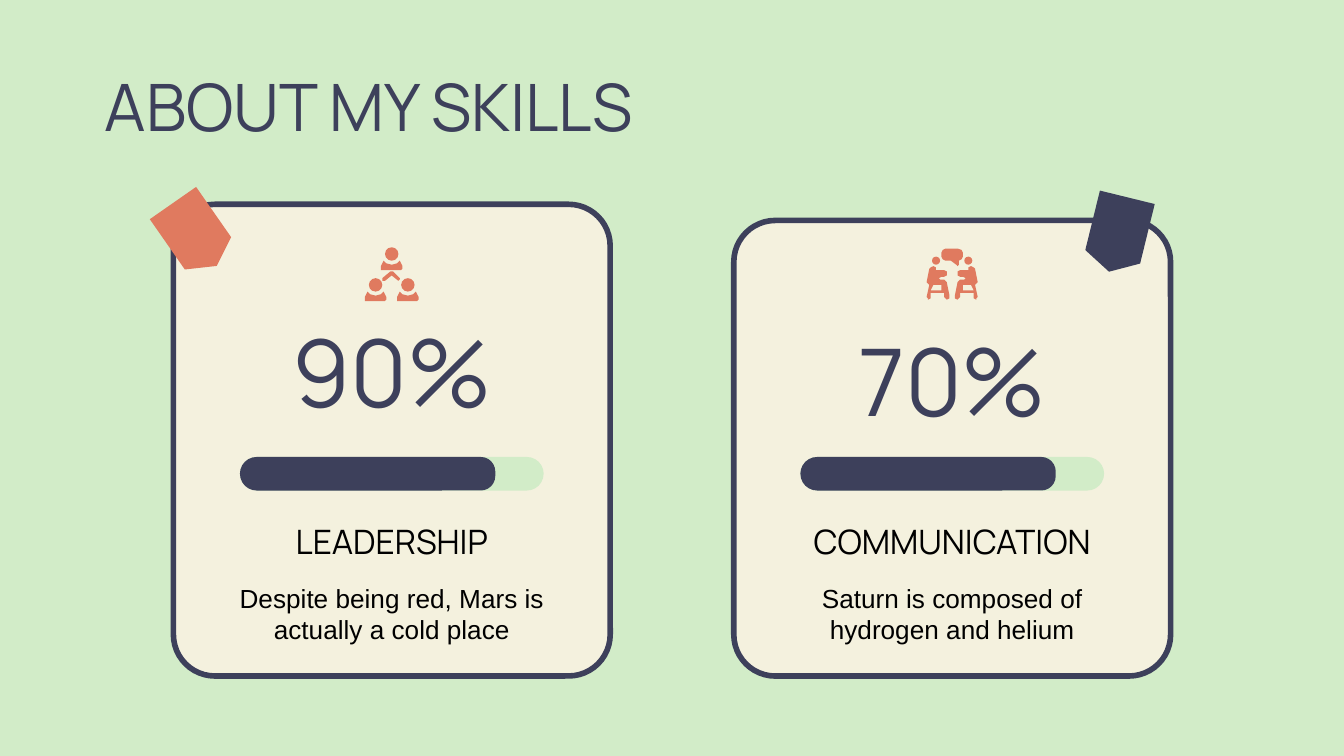
from pptx import Presentation
from pptx.dml.color import RGBColor
from pptx.enum.shapes import MSO_SHAPE as SHAPE
from pptx.enum.text import MSO_ANCHOR as ANCHOR, PP_ALIGN as ALIGN
from pptx.util import Inches, Pt

GREEN = RGBColor(0xD2, 0xEC, 0xC8)
CREAM = RGBColor(0xF4, 0xF1, 0xDE)
NAVY = RGBColor(0x3D, 0x40, 0x5B)
CORAL = RGBColor(0xE0, 0x7A, 0x5F)
BLACK = RGBColor(0, 0, 0)
HEAD_FONT, BODY_FONT = "Manrope", "Arial"

CARD_W, CARD_BOTTOM = 3.25, 5.03
TEXT_W = 2.55
BAR_W, BAR_H, FILLED_W = 2.26, 0.25, 1.9
FACE = 0.1

BODY = [(2, 0), (0.7, 2), (0, 4), (0, 6), (0.3, 6.7), (1, 7), (14.5, 7), (15.2, 6.7),
        (15.5, 6), (15.5, 4), (14.8, 2), (13.5, 0), (11.5, 2), (7.7, 3), (4, 2)]
CHEVRON = [(7, 0), (6, 0.3), (0.3, 5), (0, 6), (0.5, 7), (1.5, 7), (7, 3),
           (11.5, 7), (12.5, 7), (13, 6), (12.7, 5), (8, 0.3)]
BUBBLE = [(3, 0), (1, 1), (0, 3), (0, 6), (1, 8), (3, 9), (7, 9), (11, 12.5),
          (12, 13), (13, 12), (13, 9), (15, 8), (15.5, 6), (15.5, 3), (15, 1), (12.5, 0)]
SITTER = [(-14, 0), (-16, 1), (-17, 2), (-19, 12), (-18.5, 13), (-17, 14),
          (-19, 23), (-18.5, 24.5), (-17.5, 25), (-16.5, 24), (-15.5, 20),
          (-6.5, 20), (-5.5, 23), (-4, 25), (-2.5, 24), (-1.5, 22), (-4.5, 12),
          (-6.5, 10), (-9, 10), (-10.5, 9), (-8.5, 8), (-5.5, 8), (-4, 7),
          (-3.5, 5.5), (-4, 4), (-5.5, 3), (-11.5, 3), (-12.5, 1)]
CHAIR_GAP = [(-8.5, 14), (-7.5, 18), (-15.5, 18), (-14.5, 14)]


def paint(sp, color):
    sp.shadow.inherit = False
    sp.fill.solid()
    sp.fill.fore_color.rgb = color
    sp.line.fill.background()
    return sp


def add_shape(slide, kind, x, y, w, h, color, rotation=0):
    sp = slide.shapes.add_shape(kind, Inches(x), Inches(y), Inches(w), Inches(h))
    sp.rotation = rotation
    return paint(sp, color)


def add_outline(slide, x, y, *contours):
    start = contours[0][0]
    builder = slide.shapes.build_freeform(start[0], start[1], scale=Inches(0.01))
    builder.add_line_segments(contours[0][1:])
    for contour in contours[1:]:
        builder.move_to(*contour[0])
        builder.add_line_segments(contour[1:])
    return paint(builder.convert_to_shape(Inches(x), Inches(y)), CORAL)


def write(sp, text, size, font, color, align=ALIGN.CENTER, anchor=ANCHOR.TOP):
    tf = sp.text_frame
    tf.word_wrap = True
    tf.vertical_anchor = anchor
    tf.margin_left = tf.margin_right = tf.margin_top = tf.margin_bottom = 0
    p = tf.paragraphs[0]
    p.alignment = align
    r = p.add_run()
    r.text = text
    r.font.size = Pt(size)
    r.font.name = font
    r.font.color.rgb = color


def add_text(slide, cx, y, h, *args, **kwargs):
    sp = slide.shapes.add_textbox(Inches(cx - TEXT_W / 2), Inches(y), Inches(TEXT_W), Inches(h))
    write(sp, *args, **kwargs)


def add_title(slide, x, y, w, h):
    sp = slide.shapes.title
    sp.left, sp.top, sp.width, sp.height = map(Inches, (x, y, w, h))
    write(sp, "ABOUT MY SKILLS", 35, HEAD_FONT, NAVY, align=ALIGN.LEFT)


def add_team_icon(slide, cx, y):
    for dx, dy in ((0, 0), (0.12, 0.23), (-0.12, 0.23)):
        add_shape(slide, SHAPE.OVAL, cx + dx - FACE / 2, y + dy, FACE, FACE, CORAL)
        add_outline(slide, cx + dx - 0.08, y + dy + FACE, BODY)
    add_outline(slide, cx - 0.07, y + 0.18, CHEVRON)


def add_talk_icon(slide, cx, y):
    add_outline(slide, cx - 0.08, y + 0.01, BUBBLE)
    for side in (1, -1):
        add_shape(slide, SHAPE.OVAL, cx - side * 0.12 - 0.03, y + 0.07, 0.06, 0.06, CORAL)
        contours = [[(side * px, py) for px, py in c] for c in (SITTER, CHAIR_GAP)]
        add_outline(slide, cx, y + 0.14, *contours)


def add_bar(slide, x, y):
    for w, end_radius, color in ((BAR_W, 0.5, GREEN), (FILLED_W, 0.43, NAVY)):
        sp = add_shape(slide, SHAPE.ROUND_2_SAME_RECTANGLE, x + (w - BAR_H) / 2,
                       y + (BAR_H - w) / 2, BAR_H, w, color, 90)
        sp.adjustments[0] = end_radius
        sp.adjustments[1] = 0.5


def add_card(slide, x, y, tape, add_icon, percent, percent_h, name, text):
    cx = x + CARD_W / 2
    card = add_shape(slide, SHAPE.ROUNDED_RECTANGLE, x, y, CARD_W, CARD_BOTTOM - y, CREAM)
    card.adjustments[0] = 0.095
    card.line.color.rgb = NAVY
    card.line.width = Pt(3)
    tape_dx, tape_dy, tape_color, rotation = tape
    add_shape(slide, SHAPE.FLOWCHART_OFFPAGE_CONNECTOR, x + tape_dx, y + tape_dy,
              0.42, 0.57, tape_color, rotation)
    add_icon(slide, cx, CARD_BOTTOM - 3.19)
    add_text(slide, cx, CARD_BOTTOM - 2.27 - percent_h / 2, percent_h,
             percent, 50, HEAD_FONT, NAVY, anchor=ANCHOR.BOTTOM)
    add_bar(slide, cx - BAR_W / 2, CARD_BOTTOM - 1.63)
    add_text(slide, cx, CARD_BOTTOM - 1.21, 0.36, name, 18, HEAD_FONT, BLACK,
             anchor=ANCHOR.BOTTOM)
    add_text(slide, cx, CARD_BOTTOM - 0.7, 0.6, text, 14, BODY_FONT, BLACK)


def main():
    prs = Presentation()
    prs.slide_width = Inches(10)
    prs.slide_height = prs.slide_width * 9 // 16
    slide = prs.slides.add_slide(prs.slide_layouts[5])
    slide.background.fill.solid()
    slide.background.fill.fore_color.rgb = GREEN
    add_title(slide, 0.78, 0.49, 8.44, 0.63)
    add_card(slide, 1.29, 1.52, (-0.05, -0.06, CORAL, 325.1), add_team_icon, "90%", 0.82,
             "LEADERSHIP", "Despite being red, Mars is actually a cold place")
    add_card(slide, 5.46, 1.64, (2.65, -0.18, NAVY, 13.8), add_talk_icon, "70%", 0.96,
             "COMMUNICATION", "Saturn is composed of hydrogen and helium")
    prs.save("out.pptx")


if __name__ == "__main__":
    main()
